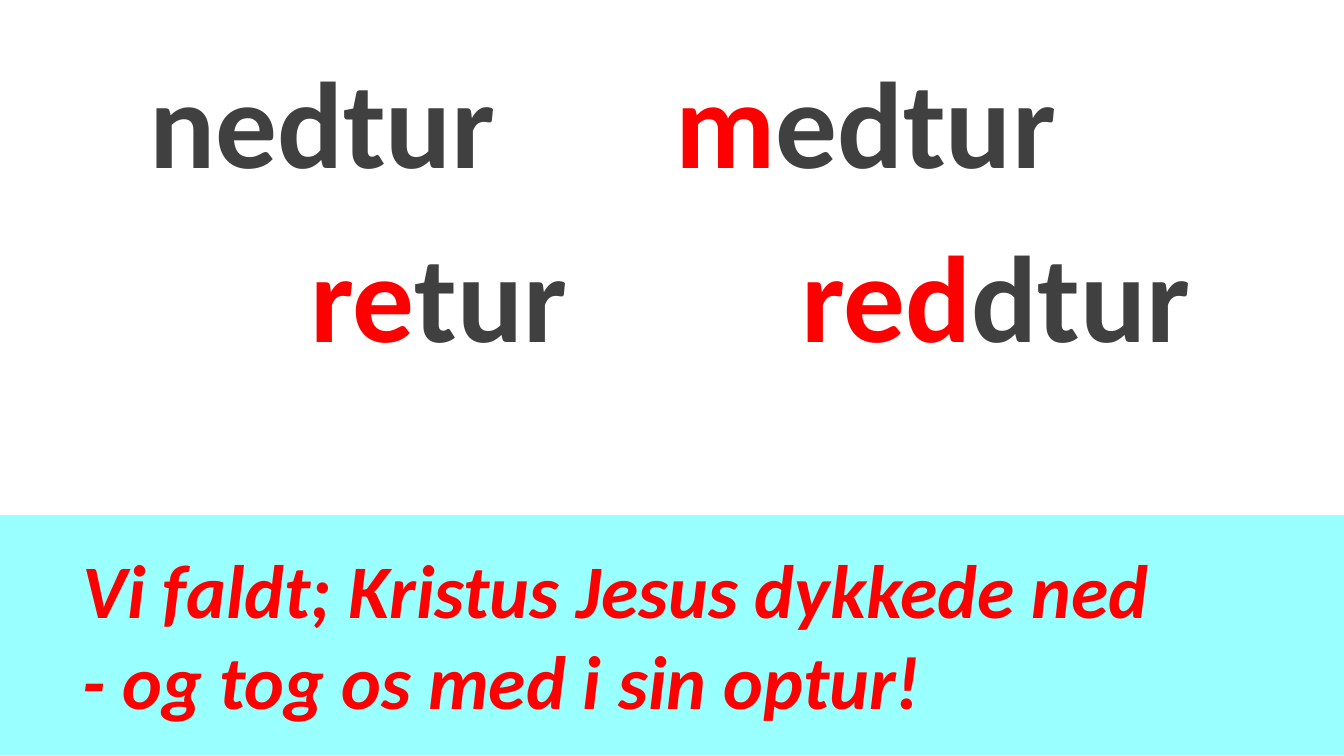
import pptx
import pptx.dml.color
import pptx.enum.shapes
import pptx.enum.text
import pptx.util

Cm = pptx.util.Cm
Align = pptx.enum.text.PP_ALIGN

RED, GREY, AQUA = "FF0000", "404040", "99FFFF"
PAGE_WIDTH, PAGE_HEIGHT = 33.87, 19.05
BAND_TOP = 12.98

WORD_FORMAT = {"name": "Calibri", "size": pptx.util.Pt(88), "bold": True}
MESSAGE_FORMAT = {"name": "Calibri", "size": pptx.util.Pt(54), "bold": True, "italic": True}

WORD_HEIGHT = 4.01
# Each row: top, then (left, width, red letters, grey letters) for each word
WORD_ROWS = [
    (1.02, [(3.45, 9.35, "", "nedtur"), (16.71, 10.21, "m", "edtur")]),
    (5.41, [(7.54, 7.04, "re", "tur"), (19.89, 10.41, "red", "dtur")]),
]
MESSAGE = ["Vi faldt; Kristus Jesus dykkede ned", "- og tog os med i sin optur!"]


def colour(value):
    return pptx.dml.color.RGBColor.from_string(value)


def add_text(page, box, lines, font_format, align):
    """Each line is a list of (text, colour) spans."""
    frame = page.shapes.add_textbox(*map(Cm, box)).text_frame
    frame.word_wrap = False
    frame.auto_size = pptx.enum.text.MSO_AUTO_SIZE.SHAPE_TO_FIT_TEXT
    for index, line in enumerate(lines):
        para = frame.add_paragraph() if index else frame.paragraphs[0]
        para.alignment = align
        for text, value in line:
            span = para.add_run()
            span.text = text
            span.font.color.rgb = colour(value)
            for attribute, setting in font_format.items():
                setattr(span.font, attribute, setting)


def add_words(page, rows):
    for top, words in rows:
        for left, width, new, kept in words:
            spans = [(text, value) for text, value in ((new, RED), (kept, GREY)) if text]
            add_text(page, (left, top, width, WORD_HEIGHT), [spans], WORD_FORMAT, Align.CENTER)


def add_message_band(page, box):
    left, top, width, height = box
    band = page.shapes.add_shape(pptx.enum.shapes.MSO_SHAPE.RECTANGLE, *map(Cm, box))
    band.shadow.inherit = False
    band.fill.solid()
    band.fill.fore_color.rgb = colour(AQUA)
    band.line.fill.background()
    message_box = (left + 1.83, top + 0.58, width - 6.21, height - 1.17)
    add_text(page, message_box, [[(line, RED)] for line in MESSAGE], MESSAGE_FORMAT, Align.LEFT)


def main():
    deck = pptx.Presentation()
    deck.slide_width, deck.slide_height = Cm(PAGE_WIDTH), Cm(PAGE_HEIGHT)
    page = deck.slides.add_slide(deck.slide_layouts[6])
    add_message_band(page, (0, BAND_TOP, PAGE_WIDTH, 6.05))
    add_words(page, WORD_ROWS)
    deck.save("out.pptx")


if __name__ == "__main__":
    main()
